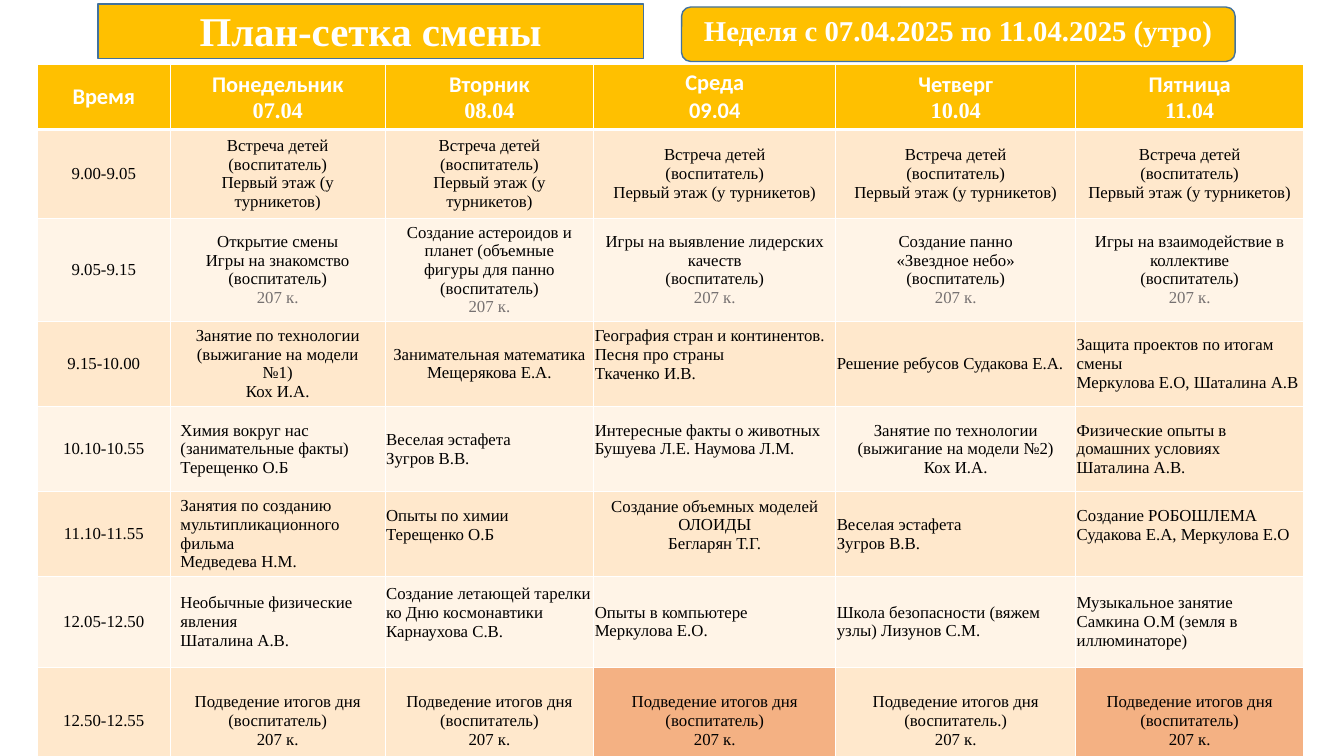
from lxml import etree
from pptx import Presentation
from pptx.dml.color import RGBColor
from pptx.enum.shapes import MSO_SHAPE
from pptx.enum.text import MSO_ANCHOR, MSO_AUTO_SIZE, PP_ALIGN
from pptx.oxml.ns import qn
from pptx.util import Inches, Pt

ROUNDED = MSO_SHAPE.ROUNDED_RECTANGLE
MIDDLE, BOTTOM = MSO_ANCHOR.MIDDLE, MSO_ANCHOR.BOTTOM
CENTER, LEFT = PP_ALIGN.CENTER, PP_ALIGN.LEFT
NO_FIT = MSO_AUTO_SIZE.NONE

MEETING = "Встреча детей\n(воспитатель)\nПервый этаж (у турникетов)"
SUMMARY = "Подведение итогов дня\n(воспитатель)\n207 к."
DAYS = [
    ("Понедельник", "07.04"),
    ("Вторник", "08.04"),
    ("Среда", "09.04"),
    ("Четверг", "10.04"),
    ("Пятница", "11.04"),
]
SCHEDULE = [
    ["9.00-9.05"] + [MEETING] * len(DAYS),
    [
        "9.05-9.15",
        "Открытие смены\nИгры на знакомство\n(воспитатель)\n207 к.",
        "Создание астероидов и планет (объемные фигуры для панно\n(воспитатель)\n207 к.",
        "Игры на выявление лидерских качеств\n(воспитатель)\n207 к.",
        "Создание панно\n«Звездное небо»\n(воспитатель)\n207 к.",
        "Игры на взаимодействие в коллективе\n(воспитатель)\n207 к.",
    ],
    [
        "9.15-10.00",
        "Занятие по технологии (выжигание на модели №1)\nКох И.А.",
        "Занимательная математика\nМещерякова Е.А.",
        "География стран и континентов. Песня про страны\nТкаченко И.В.",
        "Решение ребусов Судакова Е.А.",
        "Защита проектов по итогам смены\nМеркулова Е.О, Шаталина А.В",
    ],
    [
        "10.10-10.55",
        "Химия вокруг нас (занимательные факты) Терещенко О.Б",
        "Веселая эстафета\nЗугров В.В.",
        "Интересные факты о животных\nБушуева Л.Е. Наумова Л.М.",
        "Занятие по технологии (выжигание на модели №2)\nКох И.А.",
        "Физические опыты в домашних условиях\nШаталина А.В.",
    ],
    [
        "11.10-11.55",
        "Занятия по созданию мультипликационного фильма\nМедведева Н.М.",
        "Опыты по химии\nТерещенко О.Б",
        "Создание объемных моделей ОЛОИДЫ\nБегларян Т.Г.",
        "Веселая эстафета\nЗугров В.В.",
        "Создание РОБОШЛЕМА\nСудакова Е.А, Меркулова Е.О",
    ],
    [
        "12.05-12.50",
        "Необычные физические явления\nШаталина А.В.",
        "Создание летающей тарелки ко Дню космонавтики Карнаухова С.В.",
        "Опыты в компьютере\nМеркулова Е.О.",
        "Школа безопасности (вяжем узлы) Лизунов С.М.",
        "Музыкальное занятие\nСамкина О.М (земля в иллюминаторе)",
    ],
    ["12.50-12.55"] + [SUMMARY] * 3 + [SUMMARY.replace("ль)", "ль.)"), SUMMARY],
]
COLUMN_WIDTHS = [1.32, 2.13, 2.07, 2.4, 2.38, 2.26]
ROW_HEIGHTS = [0.62, 0.88, 0.75, 0.69, 0.85, 0.71, 0.9, 1.06]
CENTERED_ROWS = {1, 2, 7}
CENTERED_CELLS = {(3, 1), (3, 2), (4, 4), (5, 3)}
RAISED_CELLS = {(3, 3), (4, 3), (5, 2), (5, 3), (5, 5), (6, 2)}
ROOM_ROW = 2


def color(value):
    return RGBColor.from_string(value)


class ScheduleSlide:
    serif, sans = "Times New Roman", "Calibri"
    gold, outline, white, black, gray = "FFC000", "43729D", "FFFFFF", "000000", "767171"
    bands = ("FFF4E7", "FFE8CC")
    special_fills = {(4, 5): "FFE8CC", (7, 3): "F4B183", (7, 5): "F4B183"}

    def __init__(self, presentation):
        self.slide = presentation.slides.add_slide(presentation.slide_layouts[5])

    def add_run(self, paragraph, text, size, font_name, font_color, bold):
        run = paragraph.add_run()
        run.text = text
        run.font.size = Pt(size)
        run.font.name = font_name
        run.font.bold = bold
        run.font.color.rgb = color(font_color)

    def format_banner(self, shape, text, size, anchor):
        shape.fill.solid()
        shape.fill.fore_color.rgb = color(self.gold)
        shape.line.color.rgb = color(self.outline)
        shape.line.width = Pt(1)
        shape.shadow.inherit = False
        frame = shape.text_frame
        frame.word_wrap = True
        frame.auto_size = NO_FIT
        frame.vertical_anchor = anchor
        paragraph = frame.paragraphs[0]
        paragraph.alignment = CENTER
        paragraph.line_spacing = 0.7
        self.add_run(paragraph, text, size, self.serif, self.white, True)

    def add_title(self, text, left, top, width, height):
        title = self.slide.shapes.title
        title.left, title.top = Inches(left), Inches(top)
        title.width, title.height = Inches(width), Inches(height)
        properties = title.element.spPr
        geometry = etree.SubElement(properties, qn("a:prstGeom"), prst="roundRect")
        etree.SubElement(geometry, qn("a:avLst"))
        self.format_banner(title, text, 29.2, BOTTOM)

    def add_banner(self, text, left, top, width, height):
        banner = self.slide.shapes.add_shape(
            ROUNDED, Inches(left), Inches(top), Inches(width), Inches(height))
        self.format_banner(banner, text, 20.5, MIDDLE)

    def set_borders(self, cell, row):
        widths = {"lnL": 0.96, "lnR": 0.96,
                  "lnT": 3 if row == 1 else 0.96, "lnB": 3 if row == 0 else 0.96}
        properties = cell._tc.get_or_add_tcPr()
        for side, width in widths.items():
            border = etree.SubElement(properties, qn("a:" + side), w=str(Pt(width)))
            fill = etree.SubElement(border, qn("a:solidFill"))
            etree.SubElement(fill, qn("a:srgbClr"), val=self.white)

    def format_cell(self, cell, row, fill):
        self.set_borders(cell, row)
        cell.fill.solid()
        cell.fill.fore_color.rgb = color(fill)
        cell.vertical_anchor = MIDDLE

    def add_paragraph(self, cell, index, alignment):
        frame = cell.text_frame
        paragraph = frame.add_paragraph() if index else frame.paragraphs[0]
        paragraph.alignment = alignment
        return paragraph

    def fill_header(self, cell, lines):
        self.format_cell(cell, 0, self.gold)
        for index, line in enumerate(lines):
            font_name = self.serif if index and lines[0] != "Среда" else self.sans
            paragraph = self.add_paragraph(cell, index, CENTER)
            self.add_run(paragraph, line, 16, font_name, self.white, True)

    def fill_activity(self, cell, row, column, text):
        place = (row, column)
        self.format_cell(cell, row, self.special_fills.get(place, self.bands[row % 2]))
        if row > 2 and column > 1:
            cell.margin_left = cell.margin_right = Inches(0.01)
        if place in RAISED_CELLS:
            cell.margin_bottom = Inches(0.23)
        centered = column == 0 or row in CENTERED_ROWS or place in CENTERED_CELLS
        for index, line in enumerate(text.split("\n")):
            paragraph = self.add_paragraph(cell, index, CENTER if centered else LEFT)
            is_room = row == ROOM_ROW and line == "207 к."
            self.add_run(paragraph, line, 12, self.serif,
                         self.gray if is_room else self.black, False)

    def add_schedule(self, left, top):
        table = self.slide.shapes.add_table(
            len(ROW_HEIGHTS), len(COLUMN_WIDTHS), Inches(left), Inches(top),
            Inches(sum(COLUMN_WIDTHS)), Inches(sum(ROW_HEIGHTS))).table
        table.horz_banding = False
        for column, width in zip(table.columns, COLUMN_WIDTHS):
            column.width = Inches(width)
        for row, height in zip(table.rows, ROW_HEIGHTS):
            row.height = Inches(height)
        for column, lines in enumerate([("Время",)] + DAYS):
            self.fill_header(table.cell(0, column), lines)
        for row, activities in enumerate(SCHEDULE, 1):
            for column, text in enumerate(activities):
                self.fill_activity(table.cell(row, column), row, column, text)


def main():
    presentation = Presentation()
    presentation.slide_width = Inches(13.33)
    presentation.slide_height = Inches(7.5)
    schedule = ScheduleSlide(presentation)
    schedule.add_schedule(0.37, 0.64)
    schedule.add_title("План-сетка смены", 0.97, 0.04, 5.41, 0.54)
    schedule.add_banner("Неделя с 07.04.2025 по 11.04.2025 (утро)", 6.76, 0.07, 5.49, 0.54)
    presentation.save("out.pptx")


if __name__ == "__main__":
    main()
